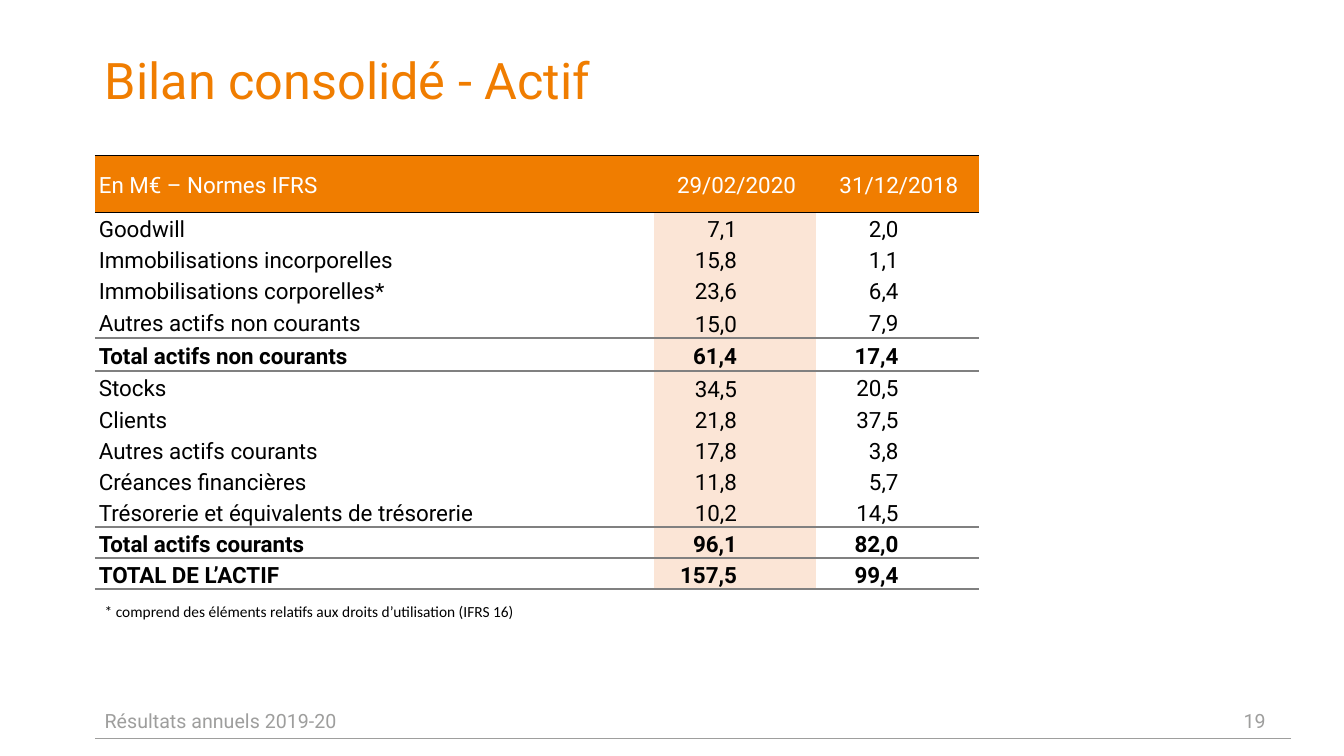
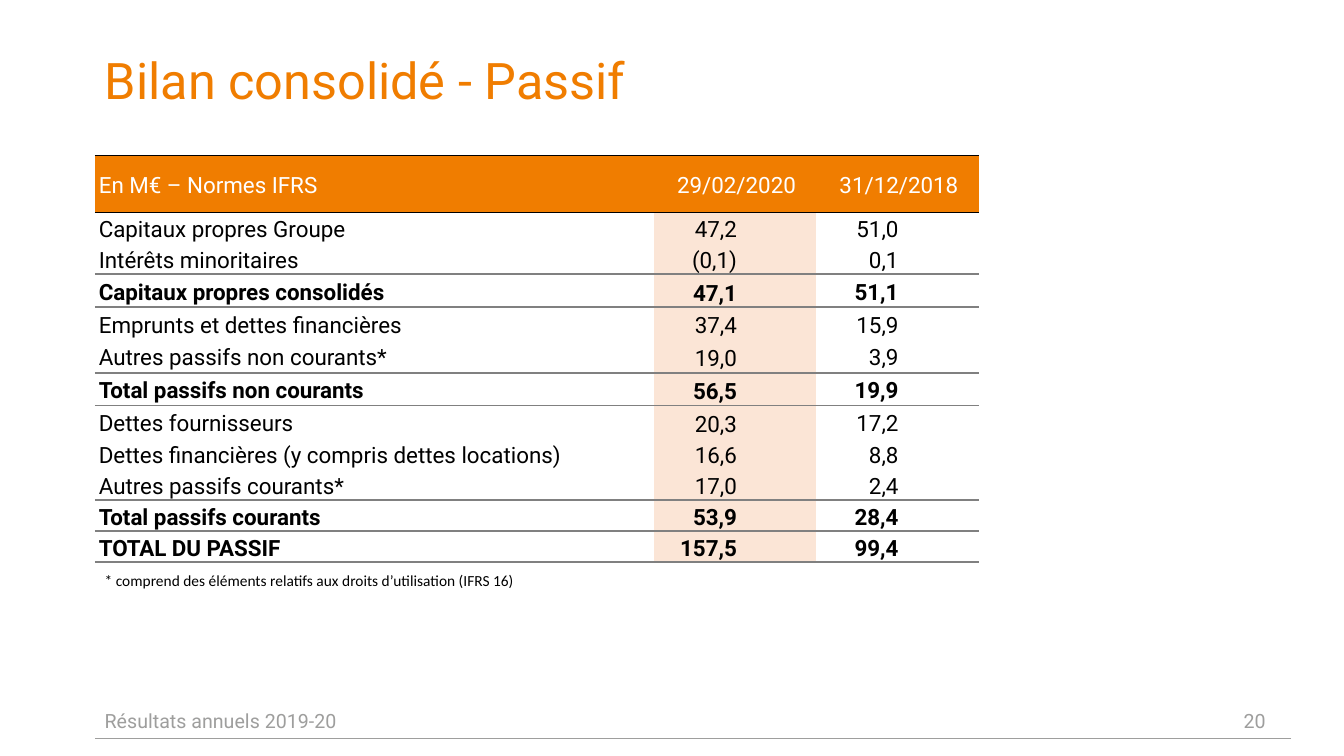
import pptx
import pptx.dml.color
import pptx.enum.shapes
import pptx.enum.text
import pptx.oxml
import pptx.oxml.ns
import pptx.util

Pt = pptx.util.Pt
RGB = pptx.dml.color.RGBColor
ALIGN = pptx.enum.text.PP_ALIGN
ANCHOR = pptx.enum.text.MSO_ANCHOR

ORANGE = RGB(0xF0, 0x7D, 0x00)
PEACH = RGB(0xFB, 0xE5, 0xD6)
GRAY = RGB(0x9E, 0x9E, 0x9D)
RULE = RGB(0x80, 0x80, 0x80)
BLACK = RGB(0, 0, 0)
WHITE = RGB(255, 255, 255)

LEFT, WIDTH = 67.7, 854.6
TOP, HEAD, ROW = 111, 40.6, 22.05
COLS = (399.6, 115.4, 116.6)
TAB = 56.2
NOTE = "* comprend des éléments relatifs aux droits d’utilisation (IFRS 16)"
HEADS = ("En M€ – Normes IFRS", "29/02/2020", "31/12/2018")

# Each row: label, two values, whether it is a total
ASSETS = (
    ("Goodwill", "7,1", "2,0", False),
    ("Immobilisations incorporelles", "15,8", "1,1", False),
    ("Immobilisations corporelles*", "23,6", "6,4", False),
    ("Autres actifs non courants", "15,0", "7,9", False),
    ("Total actifs non courants", "61,4", "17,4", True),
    ("Stocks", "34,5", "20,5", False),
    ("Clients", "21,8", "37,5", False),
    ("Autres actifs courants", "17,8", "3,8", False),
    ("Créances financières", "11,8", "5,7", False),
    ("Trésorerie et équivalents de trésorerie", "10,2", "14,5", False),
    ("Total actifs courants", "96,1", "82,0", True),
    ("TOTAL DE L’ACTIF", "157,5", "99,4", True),
)
DEBTS = (
    ("Capitaux propres Groupe", "47,2", "51,0", False),
    ("Intérêts minoritaires", "(0,1)", "0,1", False),
    ("Capitaux propres consolidés", "47,1", "51,1", True),
    ("Emprunts et dettes financières", "37,4", "15,9", False),
    ("Autres passifs non courants*", "19,0", "3,9", False),
    ("Total passifs non courants", "56,5", "19,9", True),
    ("Dettes fournisseurs", "20,3", "17,2", False),
    ("Dettes financières (y compris dettes locations)", "16,6", "8,8", False),
    ("Autres passifs courants*", "17,0", "2,4", False),
    ("Total passifs courants", "53,9", "28,4", True),
    ("TOTAL DU PASSIF", "157,5", "99,4", True),
)


def write(frame, text, size=16, color=BLACK, font="Roboto", bold=False,
          align=ALIGN.LEFT, space=None):
    para = frame.paragraphs[0]
    para.alignment = align
    if space:
        para.line_spacing = space
    run = para.add_run()
    run.text = text
    run.font.name = font
    run.font.size = Pt(size)
    run.font.bold = bold
    run.font.color.rgb = color
    return para


def label(slide, text, x, y, w, h, anchor=ANCHOR.TOP, **style):
    frame = slide.shapes.add_textbox(Pt(x), Pt(y), Pt(w), Pt(h)).text_frame
    frame.word_wrap = True
    frame.vertical_anchor = anchor
    write(frame, text, **style)


def node(parent, tag, **attrs):
    child = parent.makeelement(pptx.oxml.ns.qn(tag), attrs)
    parent.append(child)
    return child


def border(cell, side, line):
    """Draw one side of a cell from (colour, width), or clear it if None."""
    color, width = line or (None, 0)
    edge = node(cell._tc.get_or_add_tcPr(), "a:ln" + side, w=str(Pt(width)))
    if line:
        node(node(edge, "a:solidFill"), "a:srgbClr", val=str(color))
    else:
        node(edge, "a:noFill")


def tab(para, at):
    stops = node(para._p.get_or_add_pPr(), "a:tabLst")
    node(stops, "a:tab", pos=str(Pt(at)), algn="r")


def dress(cell, above, below, fill):
    cell.margin_left = cell.margin_top = Pt(2.9)
    cell.margin_right, cell.margin_bottom = Pt(0.7), 0
    cell.vertical_anchor = ANCHOR.MIDDLE
    for side, line in zip("LRTB", (None, None, above, below)):
        border(cell, side, line)
    if fill is None:
        cell.fill.background()
    else:
        cell.fill.solid()
        cell.fill.fore_color.rgb = fill


def rules(rows):
    """Lines above each table row, then the one below the last."""
    sums = [False] + [row[-1] for row in rows] + [False]
    thin, thick = (BLACK, 0.5), (RULE, 1.5)
    inner = [thick if a or b else None for a, b in zip(sums[1:], sums[2:])]
    return [thin, thin] + inner


def sheet(slide, rows, loose, x, y):
    """Place the balance table; loose rows have a wider line in column 1."""
    high = HEAD + ROW * len(rows)
    grid = slide.shapes.add_table(len(rows) + 1, len(COLS), Pt(x), Pt(y),
                                  Pt(sum(COLS)), Pt(high)).table
    grid.first_row = grid.horz_banding = False
    for col, width in zip(grid.columns, COLS):
        col.width = Pt(width)
    for i, row in enumerate(grid.rows):
        row.height = Pt(ROW if i else HEAD)
    lines = rules(rows)
    for c, text in enumerate(HEADS):
        cell = grid.cell(0, c)
        dress(cell, lines[0], lines[1], ORANGE)
        write(cell.text_frame, text, color=WHITE,
              align=ALIGN.CENTER if c else ALIGN.LEFT)
    for r, (*texts, total) in enumerate(rows, 1):
        for c, text in enumerate(texts):
            cell = grid.cell(r, c)
            dress(cell, lines[r], lines[r + 1], PEACH if c == 1 else None)
            para = write(cell.text_frame, "\t" + text if c else text, bold=total,
                         space=1.07 if c == 1 and r in loose else None)
            if c:
                tab(para, TAB)
    return y + high


def title(slide, text, x, y, w, h):
    head = slide.shapes.title
    head.left, head.top, head.width, head.height = Pt(x), Pt(y), Pt(w), Pt(h)
    head.text_frame.vertical_anchor = ANCHOR.TOP
    write(head.text_frame, text, size=36, color=ORANGE, space=0.9)


def footer(slide, number, x, y, w, h):
    line = slide.shapes.add_connector(
        pptx.enum.shapes.MSO_CONNECTOR.STRAIGHT,
        Pt(x + w), Pt(y + 26.6), Pt(x), Pt(y + 26.6))
    line.line.color.rgb = GRAY
    line.line.width = Pt(0.25)
    node(line._element.spPr, "a:effectLst")
    style = dict(anchor=ANCHOR.MIDDLE, size=14, color=GRAY)
    label(slide, "Résultats annuels 2019-20", x, y, 602.6, h, **style)
    label(slide, str(number), x + w - 41, y, 41, h, **style)


def page(deck, name, number, rows, loose):
    slide = deck.slides.add_slide(deck.slide_layouts[5])
    title(slide, name, LEFT, 36.7, WIDTH, 51.8)
    footer(slide, number, LEFT, 500.4, WIDTH, 28.8)
    end = sheet(slide, rows, loose, LEFT, TOP)
    label(slide, NOTE, LEFT, end + 10, 320, 20.9, size=11, font="Calibri")


def main():
    deck = pptx.Presentation()
    deck.slide_width, deck.slide_height = Pt(960), Pt(540)
    page(deck, "Bilan consolidé - Actif", 19, ASSETS, range(4, 7))
    page(deck, "Bilan consolidé - Passif", 20, DEBTS, range(3, 8))
    deck.save("out.pptx")


if __name__ == "__main__":
    main()
